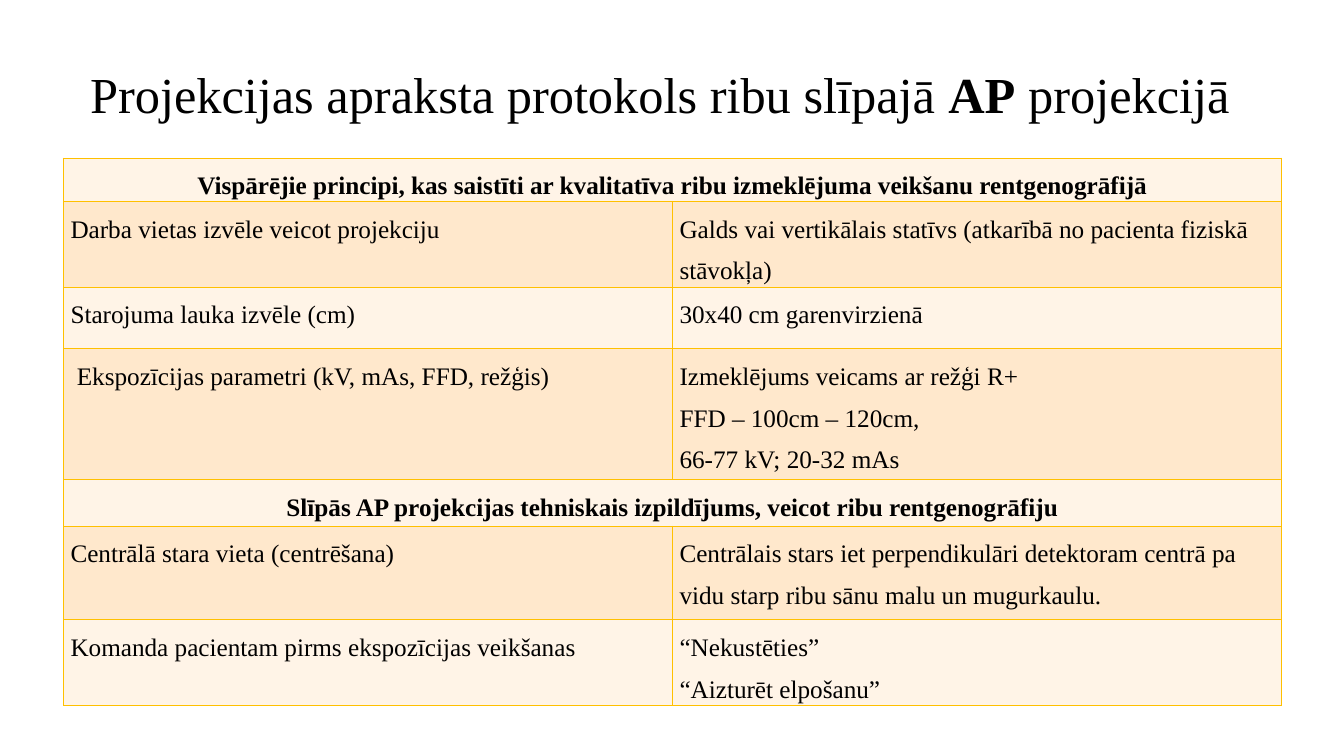
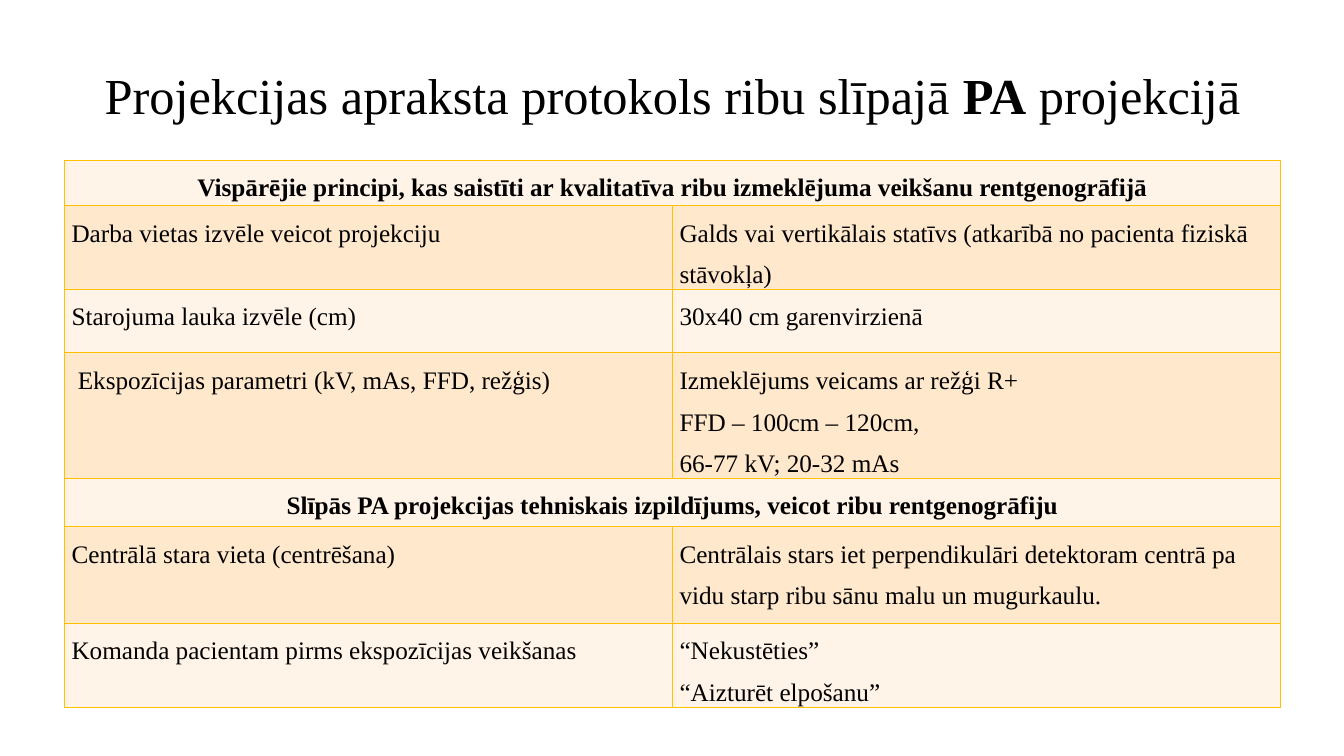
from lxml import etree
from pptx import Presentation
from pptx.dml.color import RGBColor
from pptx.enum.text import MSO_ANCHOR, PP_ALIGN
from pptx.oxml.ns import qn
from pptx.util import Inches, Pt

CENTER, LEFT = PP_ALIGN.CENTER, PP_ALIGN.LEFT
MIDDLE, TOP = MSO_ANCHOR.MIDDLE, MSO_ANCHOR.TOP

# Shared look
FONT = "Times New Roman"
INK, BORDER = "000000", "FFC000"
BANDS = ["FFF4E7", "FFE8CC"]
CELL_FORMAT = {
    "margin_left": Inches(0.07),
    "margin_right": Inches(0.07),
    "margin_top": 0,
    "margin_bottom": 0,
    "vertical_anchor": TOP,
}

# Rows with one entry span both columns
ROWS = [
    ["Vispārējie principi, kas saistīti ar kvalitatīva ribu izmeklējuma veikšanu rentgenogrāfijā"],
    ["Darba vietas izvēle veicot projekciju",
     "Galds vai vertikālais statīvs (atkarībā no pacienta fiziskā stāvokļa)"],
    ["Starojuma lauka izvēle (cm)", "30x40 cm garenvirzienā"],
    [" Ekspozīcijas parametri (kV, mAs, FFD, režģis)",
     "Izmeklējums veicams ar režģi R+\nFFD – 100cm – 120cm,\n66-77 kV; 20-32 mAs"],
    ["Slīpās {view} projekcijas tehniskais izpildījums, veicot ribu rentgenogrāfiju"],
    ["Centrālā stara vieta (centrēšana)",
     "Centrālais stars iet perpendikulāri detektoram centrā pa vidu starp ribu sānu malu un mugurkaulu."],
    ["Komanda pacientam pirms ekspozīcijas veikšanas", "“Nekustēties”\n“Aizturēt elpošanu”"],
]

# What differs between the slides
SLIDES = [
    {"view": "AP", "title": (0.39, 0.24, 12.31, 1.45), "table": (0.63, 1.57, 12.08),
     "heights": [0.43, 0.85, 0.61, 1.3, 0.46, 0.93, 0.85]},
    {"view": "PA", "title": (0.92, 0.25, 11.5, 1.45), "table": (0.64, 1.59, 12.06),
     "heights": [0.45, 0.83, 0.63, 1.24, 0.48, 0.96, 0.83]},
]


def color(value):
    return RGBColor.from_string(value)


def add_span(para, text, size, bold):
    span = para.add_run()
    span.text = text
    span.font.color.rgb = color(INK)
    for name, value in {"name": FONT, "size": Pt(size), "bold": bold}.items():
        setattr(span.font, name, value)


deck = Presentation()
deck.slide_width, deck.slide_height = Inches(13.33), Inches(7.5)

for content in SLIDES:
    page = deck.slides.add_slide(deck.slide_layouts[5])

    # Title with the view name in bold
    title = page.shapes.title
    title.left, title.top, title.width, title.height = map(Inches, content["title"])
    title.text_frame.vertical_anchor = MIDDLE
    title.text_frame.word_wrap = True
    para = title.text_frame.paragraphs[0]
    para.alignment, para.line_spacing = CENTER, 0.9
    add_span(para, "Projekcijas apraksta protokols ribu slīpajā ", 36, False)
    add_span(para, content["view"], 36, True)
    add_span(para, " projekcijā", 36, False)

    # Table frame
    heights = content["heights"]
    left, top, width = map(Inches, content["table"])
    table = page.shapes.add_table(len(ROWS), 2, left, top, width, Inches(sum(heights))).table
    for row, height in zip(table.rows, heights):
        row.height = Inches(height)

    # Borders, then alternating fills
    for index, row in enumerate(table.rows):
        for cell in row.cells:
            properties = cell._tc.get_or_add_tcPr()
            for side in ("lnL", "lnR", "lnT", "lnB"):
                line = etree.SubElement(properties, qn(f"a:{side}"), w=str(Pt(1)))
                fill = etree.SubElement(line, qn("a:solidFill"))
                etree.SubElement(fill, qn("a:srgbClr"), val=BORDER)
            cell.fill.solid()
            cell.fill.fore_color.rgb = color(BANDS[index % 2])
            for name, value in CELL_FORMAT.items():
                setattr(cell, name, value)

    # Cell text
    for index, texts in enumerate(ROWS):
        heading = len(texts) == 1
        if heading:
            table.cell(index, 0).merge(table.cell(index, 1))
        for column, text in enumerate(texts):
            frame = table.cell(index, column).text_frame
            for number, line in enumerate(text.format(view=content["view"]).split("\n")):
                para = frame.add_paragraph() if number else frame.paragraphs[0]
                para.alignment = CENTER if heading else LEFT
                para.line_spacing = 1.5
                add_span(para, line, 18, heading)

deck.save("out.pptx")
